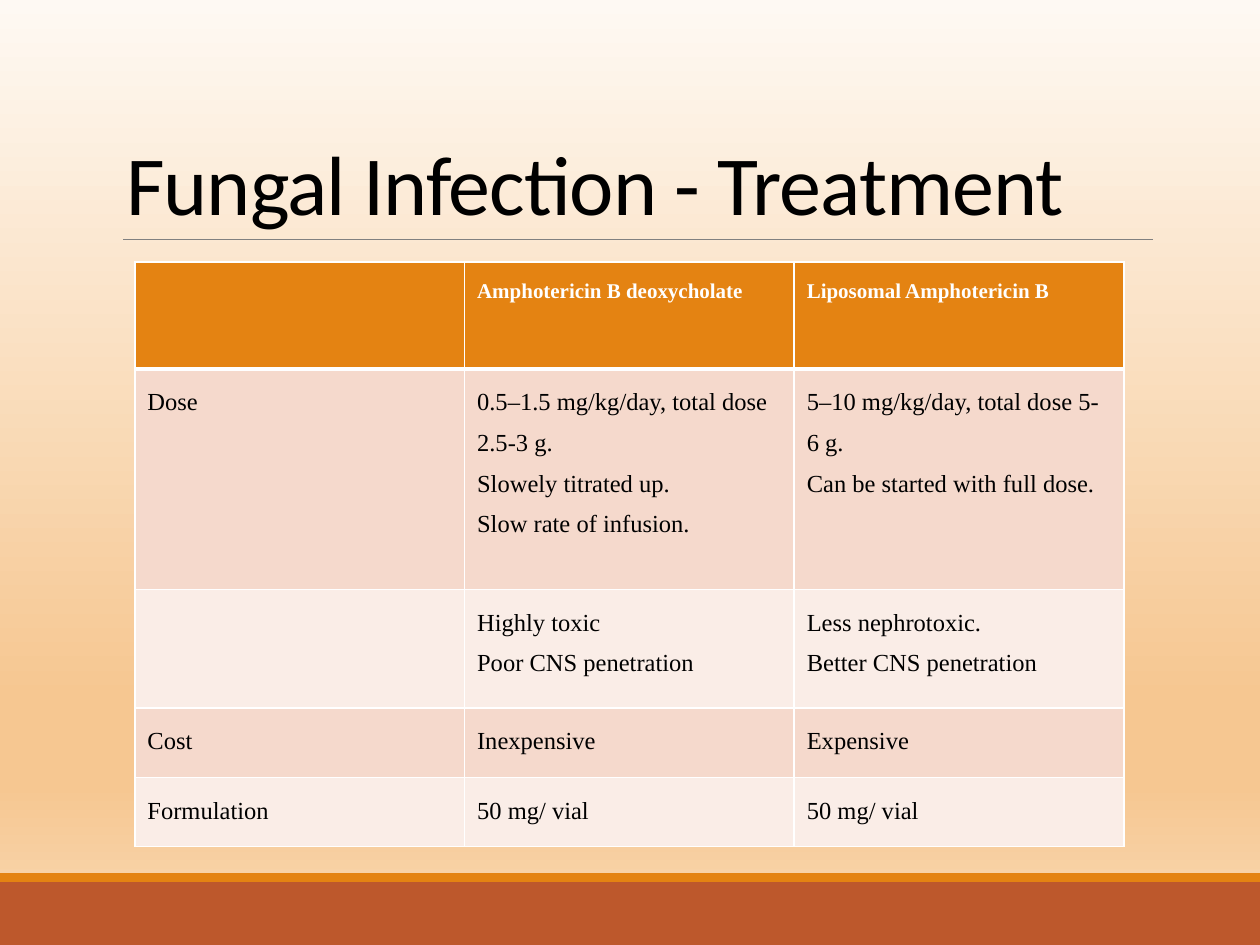
import pptx
import pptx.dml.color
import pptx.enum.shapes
import pptx.enum.text
import pptx.oxml
import pptx.oxml.ns
import pptx.util
from pptx.util import Inches

NS = pptx.oxml.ns.nsdecls("a", "p")
ORANGE, RUST, WHITE, BLACK = "E48312", "BD582C", "FFFFFF", "000000"
BAND_FILLS = ["F5D9CC", "FAEDE7"]


def colour(hex_string):
    return pptx.dml.color.RGBColor.from_string(hex_string)


def format_text(paragraph, spacing, font_format):
    paragraph.line_spacing = spacing
    font = paragraph.runs[0].font
    for attribute, value in font_format["font"].items():
        setattr(font, attribute, value)
    font.color.rgb = colour(font_format["colour"])


prs = pptx.Presentation()
prs.slide_width, prs.slide_height = Inches(10), Inches(7.5)
slide = prs.slides.add_slide(prs.slide_layouts[5])

# Background: vertical gradient with four stops
background = slide.background.fill
background.gradient()
background.gradient_angle = 270
stops = background._fill._gradFill.find(pptx.oxml.ns.qn("a:gsLst"))
for stop in list(stops):
    stops.remove(stop)
for percent, shade in [(0, "FEF9F3"), (74, "F6C791"), (83, "F6C791"), (100, "F9DAB6")]:
    stops.append(pptx.oxml.parse_xml(
        f'<a:gs {NS} pos="{percent * 1000}"><a:srgbClr val="{shade}"/></a:gs>'))

# Footer bands
for top, height, shade in [(7, 0.5, RUST), (6.93, 0.07, ORANGE)]:
    band = slide.shapes.add_shape(pptx.enum.shapes.MSO_SHAPE.RECTANGLE,
                                  0, Inches(top), Inches(10), Inches(height))
    band.shadow.inherit = False
    band.fill.solid()
    band.fill.fore_color.rgb = colour(shade)
    band.line.fill.background()

# Rule under the title
rule = slide.shapes.add_connector(pptx.enum.shapes.MSO_CONNECTOR.STRAIGHT,
                                  Inches(0.98), Inches(1.9), Inches(9.15), Inches(1.9))
rule.line.color.rgb = colour("808080")
rule.line.width = pptx.util.Pt(0.5)
rule._element.spPr.append(pptx.oxml.parse_xml(f"<a:effectLst {NS}/>"))

# Title
title = slide.shapes.title
title_box = {"left": 0.9, "top": 0.31, "width": 8.25, "height": 1.59}
for attribute, length in title_box.items():
    setattr(title, attribute, Inches(length))
title.text_frame.text = "Fungal Infection - Treatment"
frame_format = {"auto_size": pptx.enum.text.MSO_AUTO_SIZE.NONE, "word_wrap": True,
                "vertical_anchor": pptx.enum.text.MSO_ANCHOR.BOTTOM}
for attribute, value in frame_format.items():
    setattr(title.text_frame, attribute, value)
heading = title.text_frame.paragraphs[0]
heading.alignment = pptx.enum.text.PP_ALIGN.LEFT
format_text(heading, 0.85, {"font": {"name": "Calibri", "size": pptx.util.Pt(48)},
                            "colour": BLACK})
heading.runs[0].font._element.set("spc", "-50")

# Treatment comparison table
comparison = [
    ["", "Amphotericin B deoxycholate", "Liposomal Amphotericin B"],
    ["Dose",
     "0.5–1.5 mg/kg/day, total dose 2.5-3 g.\nSlowely titrated up.\nSlow rate of infusion.",
     "5–10 mg/kg/day, total dose 5-6 g.\nCan be started with full dose."],
    ["", "Highly toxic\nPoor CNS penetration", "Less nephrotoxic.\nBetter CNS penetration"],
    ["Cost", "Inexpensive", "Expensive"],
    ["Formulation", "50 mg/ vial", "50 mg/ vial"],
]
row_heights = [0.85, 1.75, 0.94, 0.55, 0.55]
header_format = {"font": {"name": "Times New Roman", "size": pptx.util.Pt(12), "bold": True},
                 "colour": WHITE}
body_format = {"font": {"name": "Times New Roman", "size": pptx.util.Pt(14), "bold": False},
               "colour": BLACK}

table = slide.shapes.add_table(5, 3, Inches(1.07), Inches(2.08),
                               Inches(7.85), Inches(sum(row_heights))).table
for row, height in zip(table.rows, row_heights):
    row.height = Inches(height)

for r, texts in enumerate(comparison):
    cell_format = body_format if r else header_format
    for c, text in enumerate(texts):
        cell = table.cell(r, c)
        # White borders, thicker between header and body
        edge_widths = {"L": 1, "R": 1, "T": 3 if r == 1 else 1, "B": 1 if r else 3}
        for edge, width in edge_widths.items():
            cell._tc.get_or_add_tcPr().append(pptx.oxml.parse_xml(
                f'<a:ln{edge} {NS} w="{pptx.util.Pt(width)}"><a:solidFill>'
                f'<a:srgbClr val="{WHITE}"/></a:solidFill></a:ln{edge}>'))
        cell.fill.solid()
        cell.fill.fore_color.rgb = colour(BAND_FILLS[(r - 1) % 2] if r else ORANGE)
        if text:
            cell.text = text
            for paragraph in cell.text_frame.paragraphs:
                format_text(paragraph, 1.5, cell_format)

prs.save("out.pptx")
